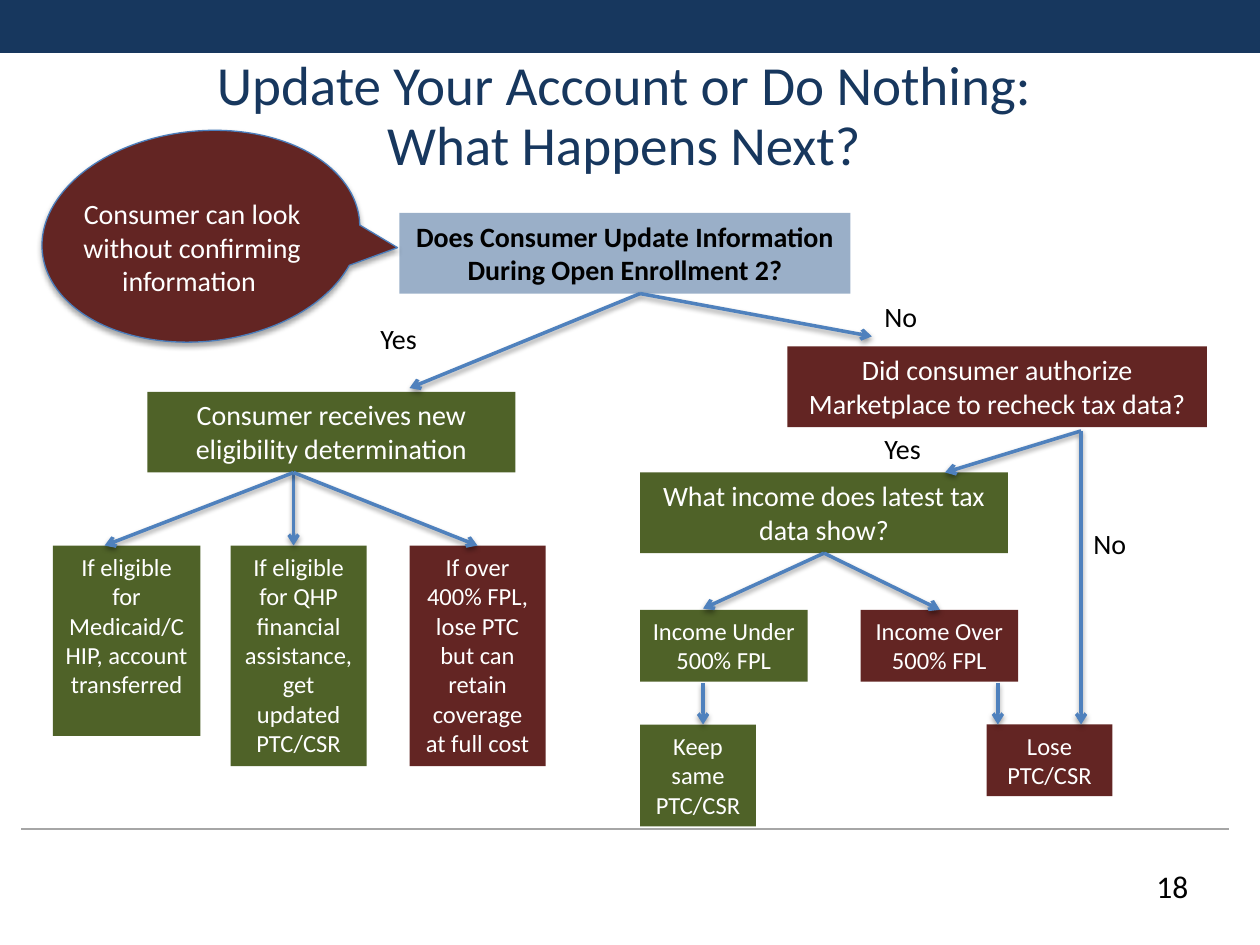
from lxml import etree
from pptx import Presentation
from pptx.dml.color import RGBColor
from pptx.enum.shapes import MSO_CONNECTOR, MSO_SHAPE
from pptx.enum.text import MSO_ANCHOR, MSO_AUTO_SIZE, PP_ALIGN
from pptx.oxml.ns import qn
from pptx.util import Inches, Pt

RECTANGLE = MSO_SHAPE.RECTANGLE
CALLOUT = MSO_SHAPE.OVAL_CALLOUT
STRAIGHT = MSO_CONNECTOR.STRAIGHT
LEFT, CENTER = PP_ALIGN.LEFT, PP_ALIGN.CENTER
TOP, MIDDLE = MSO_ANCHOR.TOP, MSO_ANCHOR.MIDDLE
GROW = MSO_AUTO_SIZE.SHAPE_TO_FIT_TEXT
NO_FIT = MSO_AUTO_SIZE.NONE

NAVY, BLUE, STEEL = "17375E", "4F81BD", "376092"
GREEN, RED = "4F6228", "632523"
BLACK, WHITE, GRAY = "000000", "FFFFFF", "A6A6A6"


def color(value):
    return RGBColor.from_string(value)


class FlowSlide:
    font = "Calibri"

    def __init__(self, deck):
        self.page = deck.slides.add_slide(deck.slide_layouts[5])
        self.shapes = self.page.shapes

    def set_text(self, shape, text, size, ink, align=CENTER, bold=False,
                 anchor=TOP, fit=GROW, spacing=None):
        frame = shape.text_frame
        frame.text = text
        frame.word_wrap = True
        frame.auto_size = fit
        frame.vertical_anchor = anchor
        for para in frame.paragraphs:
            para.alignment = align
            para.line_spacing = spacing
            for span in para.runs:
                span.font.name = self.font
                span.font.size = Pt(size)
                span.font.bold = bold
                span.font.color.rgb = color(ink)

    def title(self, text, left, top, width, height):
        box = self.shapes.title
        box.left, box.top = Inches(left), Inches(top)
        box.width, box.height = Inches(width), Inches(height)
        self.set_text(box, text, 31.5, NAVY, anchor=MIDDLE, fit=NO_FIT, spacing=0.9)

    def label(self, text, left, top, width=0.75, height=0.37, size=16,
              ink=BLACK, align=LEFT):
        box = self.shapes.add_textbox(Inches(left), Inches(top),
                                      Inches(width), Inches(height))
        self.set_text(box, text, size, ink, align)

    def shape(self, kind, fill, left, top, width, height):
        shape = self.shapes.add_shape(kind, Inches(left), Inches(top),
                                      Inches(width), Inches(height))
        shape.shadow.inherit = False
        shape.fill.solid()
        shape.fill.fore_color.rgb = color(fill)
        shape.line.fill.background()
        return shape

    def step(self, text, fill, left, top, width, height, size=14,
             ink=WHITE, bold=False):
        box = self.shape(RECTANGLE, fill, left, top, width, height)
        self.set_text(box, text, size, ink, bold=bold)
        return box

    def fade(self, shape, percent):
        tint = shape._element.spPr.find(qn("a:solidFill"))[0]
        etree.SubElement(tint, qn("a:alpha"), val=str(percent * 1000))

    def shadow(self, properties, opacity, blur, distance):
        for old in properties.findall(qn("a:effectLst")):
            properties.remove(old)
        effects = etree.SubElement(properties, qn("a:effectLst"))
        if opacity:
            outer = etree.SubElement(effects, qn("a:outerShdw"),
                                     blurRad=str(int(Pt(blur))),
                                     dist=str(int(Pt(distance))),
                                     dir="5400000", rotWithShape="0")
            tint = etree.SubElement(outer, qn("a:srgbClr"), val=BLACK)
            etree.SubElement(tint, qn("a:alpha"), val=str(opacity * 1000))

    def line(self, start, end, ink, width, shaded=False):
        line = self.shapes.add_connector(STRAIGHT, *map(Inches, start + end))
        line.line.color.rgb = color(ink)
        line.line.width = Pt(width)
        self.shadow(line._element.spPr, 38 if shaded else 0, 3.1, 1.6)
        return line

    def arrow(self, start, end):
        arrow = self.line(start, end, BLUE, 2, shaded=True)
        outline = arrow._element.spPr.find(qn("a:ln"))
        etree.SubElement(outline, qn("a:tailEnd"), type="arrow")

    def callout(self, left, top, width, height, turn, tip):
        bubble = self.shape(CALLOUT, RED, left, top, width, height)
        bubble.rotation = turn
        bubble.adjustments[0], bubble.adjustments[1] = tip
        bubble.line.color.rgb = color("4B7EBC")
        bubble.line.width = Pt(0.75)
        self.shadow(bubble._element.spPr, 35, 3.1, 1.8)


def main():
    deck = Presentation()
    deck.slide_width, deck.slide_height = Inches(10), Inches(7.5)
    flow = FlowSlide(deck)

    # Banner, footer rule, title and page number
    flow.shape(RECTANGLE, NAVY, 0, 0, 10, 0.42)
    flow.line((0.17, 6.58), (9.75, 6.58), GRAY, 0.75)
    flow.title("Update Your Account or Do Nothing: \vWhat Happens Next? ",
               0, 0.37, 10, 1.13)
    flow.label("18", 9.08, 6.83, 0.67, 0.4, size=18)

    # Questions and determination
    start = flow.step("Does Consumer Update Information During Open Enrollment 2?",
                      STEEL, 3.17, 1.69, 3.58, 0.64, 16, BLACK, bold=True)
    flow.fade(start, 50)
    for text, fill, left, top, width in (
        ("Consumer receives new eligibility determination", GREEN, 1.17, 3.11, 2.92),
        ("Did consumer authorize Marketplace to recheck tax data?", RED, 6.25, 2.75, 3.33),
        ("What income does latest tax data show?", GREEN, 5.08, 3.75, 2.92),
    ):
        flow.step(text, fill, left, top, width, 0.64, 16)

    # Outcomes
    for text, fill, left, top, width, height in (
        ("If eligible for Medicaid/CHIP, account transferred",
         GREEN, 0.42, 4.33, 1.17, 1.51),
        ("If eligible for QHP financial assistance, get updated PTC/CSR",
         GREEN, 1.83, 4.33, 1.08, 1.75),
        ("If over 400% FPL, lose PTC but can retain coverage at full cost",
         RED, 3.25, 4.33, 1.08, 1.75),
        ("Income Under 500% FPL", GREEN, 5.08, 4.84, 1.33, 0.57),
        ("Income Over 500% FPL", RED, 6.83, 4.84, 1.25, 0.57),
        ("Keep same PTC/CSR", GREEN, 5.08, 5.75, 0.92, 0.81),
        ("Lose PTC/CSR", RED, 7.83, 5.75, 1, 0.57),
    ):
        flow.step(text, fill, left, top, width, height)

    # Arrows, grouped by the point they leave from
    for origin, targets in (
        ((5.08, 2.33), ((3.25, 3.08), (6.92, 2.67))),
        ((2.33, 3.75), ((2.33, 4.33), (0.83, 4.33), (3.79, 4.33))),
        ((8.58, 3.42), ((7.5, 3.75), (8.58, 5.75))),
        ((6.54, 4.39), ((5.58, 4.83), (7.46, 4.84))),
        ((5.58, 5.42), ((5.58, 5.75),)),
        ((7.92, 5.42), ((7.92, 5.75),)),
    ):
        for target in targets:
            flow.arrow(origin, target)

    # Branch answers
    for text, left, top in (("Yes", 2.92, 2.5), ("No", 6.92, 2.33),
                            ("No", 8.58, 4.13), ("Yes", 6.92, 3.38)):
        flow.label(text, left, top)

    # Speech bubble
    flow.callout(0.33, 1.04, 2.53, 1.67, 354.1, (0.61, 0.15))
    flow.label("Consumer can look without confirming information ",
               0.4, 1.51, 2.25, 0.91, ink=WHITE, align=CENTER)

    deck.save("out.pptx")


if __name__ == "__main__":
    main()
